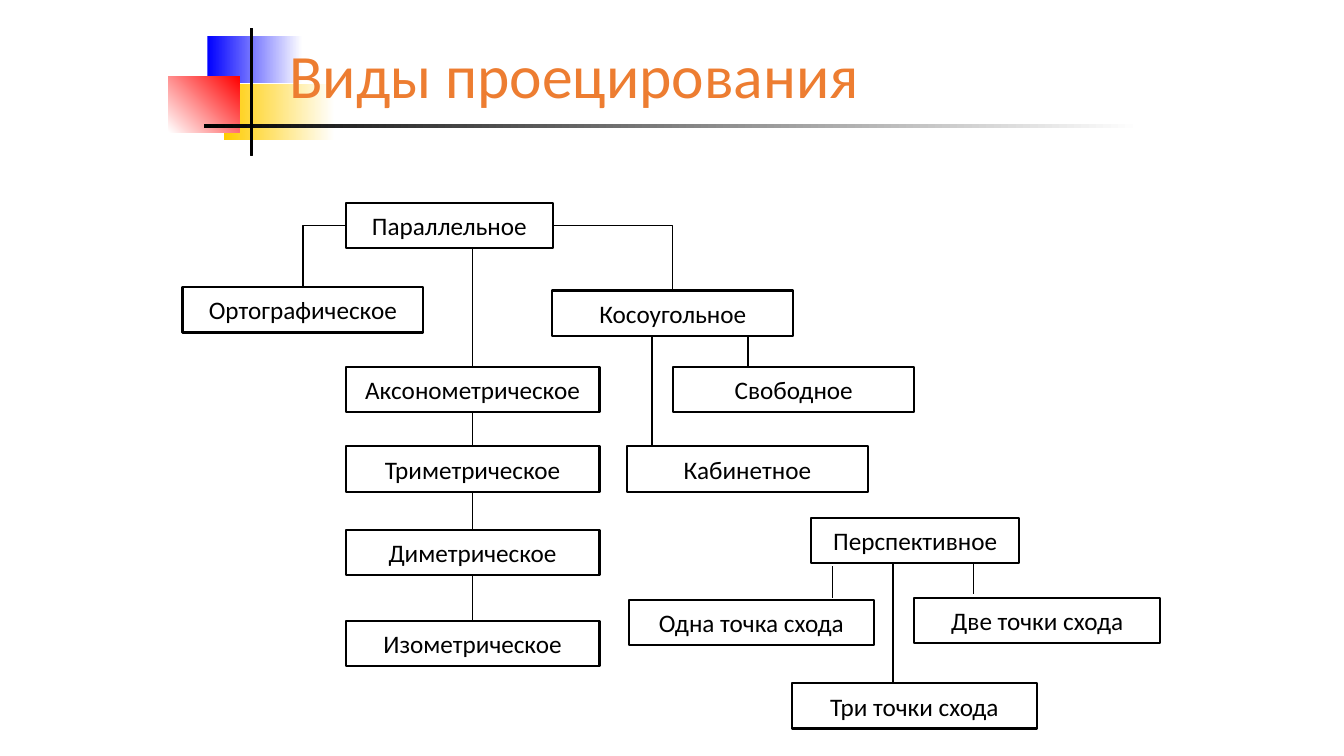
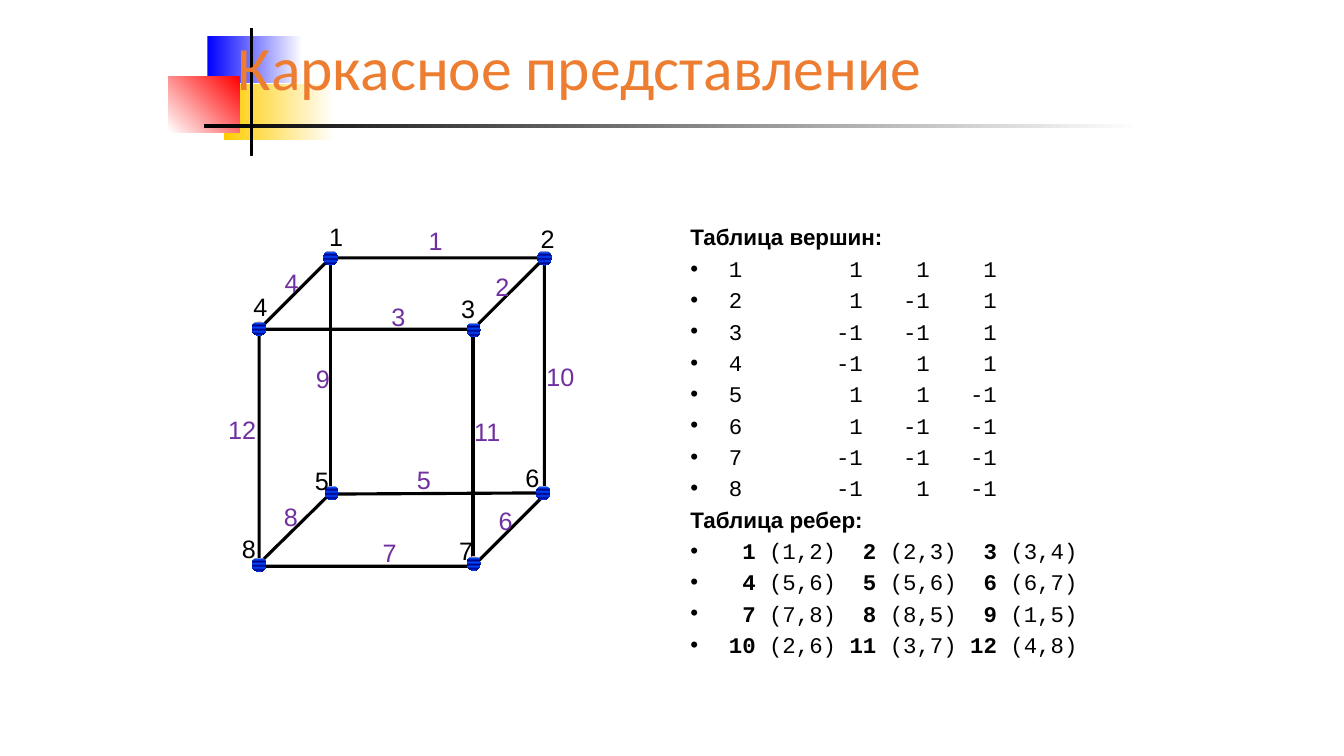
from dataclasses import dataclass
from typing import NamedTuple, Sequence

from lxml import etree
from pptx import Presentation
from pptx.dml.color import RGBColor
from pptx.enum import shapes, text
from pptx.oxml import ns
from pptx.util import Cm, Pt


# Theme: colours, fonts and type sizes
@dataclass(frozen=True)
class Theme:
    black: str = "000000"
    white: str = "FFFFFF"
    title: str = "ED7D31"
    blue: str = "0000FF"
    yellow: str = "FFCC00"
    red: str = "FF0000"
    edge: str = "7030A0"
    dot_rim: str = "F8CBAD"
    dot_light: str = "0047FF"
    dot_dark: str = "000082"
    main_font: str = "Calibri"
    label_font: str = "Arial"
    data_font: str = "Courier New"
    title_size: float = 44
    label_size: float = 18
    data_size: float = 16


THEME = Theme()


# Repeated elements; all lengths are centimetres
class Stop(NamedTuple):
    percent: int
    colour: str


class Panel(NamedTuple):
    left: float
    top: float
    width: float
    height: float
    start: str
    end: str
    angle: float = 0


class Node(NamedTuple):
    name: str
    left: float
    top: float
    width: float


class Segment(NamedTuple):
    x1: float
    y1: float
    x2: float
    y2: float


class Vertex(NamedTuple):
    dot_left: float
    dot_top: float
    label_x: float
    label_top: float
    coords: tuple[int, int, int]


class Edge(NamedTuple):
    label_x: float
    label_top: float
    ends: tuple[int, int]


EMBLEM = (
    Panel(5.23, 0.91, 2.39, 1.19, THEME.blue, THEME.white),
    Panel(5.64, 2.13, 2.79, 1.4, THEME.yellow, THEME.white),
    Panel(4.24, 1.93, 1.8, 1.4, THEME.white, THEME.red, 45),
    Panel(5.13, 3.12, 23.6, 0.1, THEME.black, THEME.white),
)

NODE_HEIGHT = 1.14
COLUMN = [
    Node(name, 8.71, top, 6.4)
    for name, top in (
        ("Аксонометрическое", 9.25),
        ("Триметрическое", 11.25),
        ("Диметрическое", 13.36),
        ("Изометрическое", 15.65),
    )
]
PARALLEL = Node("Параллельное", 8.71, 5.11, 5.23)
ORTHOGRAPHIC = Node("Ортографическое", 4.6, 7.24, 6.07)
OBLIQUE = Node("Косоугольное", 13.92, 7.32, 6.07)
OTHER_NODES = (
    Node("Свободное", 16.97, 9.25, 6.07),
    Node("Кабинетное", 15.8, 11.25, 6.07),
    Node("Перспективное", 20.45, 13.06, 5.23),
    Node("Две точки схода", 23.04, 15.06, 6.2),
    Node("Одна точка схода", 15.85, 15.11, 6.17),
    Node("Три точки схода", 19.96, 17.22, 6.17),
)
STEMS = [
    Segment(x, top, x, bottom)
    for x, top, bottom in (
        (11.91, 6.27, 9.25),
        (18.85, 8.46, 9.25),
        (16.43, 8.46, 11.25),
        (20.98, 14.27, 15.06),
        (24.54, 14.2, 14.96),
        (22.5, 14.22, 17.22),
    )
]

DOT_SIZE = 0.36
DOT_STOPS = [Stop(0, THEME.dot_rim)] + [
    Stop(percent, THEME.dot_dark if index % 2 else THEME.dot_light)
    for index, percent in enumerate((13, 28, 43, 58, 72, 87, 100))
]
HIDDEN_EDGES = (
    Segment(8.33, 6.5, 8.33, 12.47),
    Segment(6.53, 14.2, 8.31, 12.45),
    Segment(8.31, 12.45, 13.72, 12.42),
)
VERTICES = (
    Vertex(8.15, 6.32, 8.47, 5.46, (1, 1, 1)),
    Vertex(13.54, 6.32, 13.8, 5.51, (1, -1, 1)),
    Vertex(11.76, 8.13, 11.8, 7.26, (-1, -1, 1)),
    Vertex(6.35, 8.1, 6.56, 7.21, (-1, 1, 1)),
    Vertex(8.18, 12.24, 8.11, 11.61, (1, 1, -1)),
    Vertex(13.51, 12.24, 13.42, 11.53, (1, -1, -1)),
    Vertex(11.76, 14.02, 11.75, 13.36, (-1, -1, -1)),
    Vertex(6.35, 14.05, 6.27, 13.31, (-1, 1, -1)),
)
EDGES = (
    Edge(10.98, 5.56, (1, 2)),
    Edge(12.66, 6.71, (2, 3)),
    Edge(10.04, 7.47, (3, 4)),
    Edge(7.35, 6.6, (5, 6)),
    Edge(10.68, 11.58, (5, 6)),
    Edge(12.74, 12.62, (6, 7)),
    Edge(9.82, 13.41, (7, 8)),
    Edge(7.33, 12.52, (8, 5)),
    Edge(8.14, 9.04, (1, 5)),
    Edge(14.12, 8.97, (2, 6)),
    Edge(12.28, 10.36, (3, 7)),
    Edge(6.1, 10.31, (4, 8)),
)
EDGES_PER_ROW = 3


# Drawing helpers
def rgb(colour: str) -> RGBColor:
    return RGBColor.from_string(colour)


def set_font(font, name: str, size: float, colour: str) -> None:
    font.name, font.size = name, Pt(size)
    font.color.rgb = rgb(colour)


def add_box(parent, kind, left: float, top: float, width: float, height: float, line: float = 0):
    box = parent.add_shape(kind, Cm(left), Cm(top), Cm(width), Cm(height))
    box.shadow.inherit = False
    box.fill.background()
    if line:
        box.line.color.rgb = rgb(THEME.black)
        box.line.width = Pt(line)
    else:
        box.line.fill.background()
    return box


def fill_gradient(box, stops: Sequence[Stop], angle: float) -> None:
    box.fill.gradient()
    box.fill.gradient_angle = angle
    stop_list = box.element.spPr.find(".//" + ns.qn("a:gsLst"))
    for old in list(stop_list):
        stop_list.remove(old)
    for stop in stops:
        item = etree.SubElement(stop_list, ns.qn("a:gs"), pos=str(stop.percent * 1000))
        etree.SubElement(item, ns.qn("a:srgbClr"), val=stop.colour)


def add_line(page, segment: Segment, width: float, kind=shapes.MSO_CONNECTOR.STRAIGHT):
    line = page.shapes.add_connector(kind, *(Cm(value) for value in segment))
    line.line.color.rgb = rgb(THEME.black)
    line.line.width = Pt(width)
    etree.SubElement(line.element.spPr, ns.qn("a:effectLst"))
    return line


def join(page, start, start_site: int, end, end_site: int, bent: bool = False) -> None:
    kind = shapes.MSO_CONNECTOR.ELBOW if bent else shapes.MSO_CONNECTOR.STRAIGHT
    line = add_line(page, Segment(0, 0, 1, 1), 1, kind)
    line.begin_connect(start, start_site)
    line.end_connect(end, end_site)
    if bent:  # one corner: across, then down
        line.element.spPr.find(ns.qn("a:prstGeom")).set("prst", "bentConnector2")


def add_node(page, node: Node):
    box = add_box(page.shapes, shapes.MSO_SHAPE.RECTANGLE, node.left, node.top, node.width, NODE_HEIGHT, 1.5)
    box.text_frame.word_wrap = False
    para = box.text_frame.paragraphs[0]
    para.text, para.alignment = node.name, text.PP_ALIGN.CENTER
    set_font(para.font, THEME.main_font, THEME.label_size, THEME.black)
    return box


def add_label(page, number: int, center: float, top: float, colour: str) -> None:
    width = 1.4
    box = page.shapes.add_textbox(Cm(center - width / 2), Cm(top), Cm(width), Cm(1.02))
    box.text_frame.word_wrap = True
    para = box.text_frame.paragraphs[0]
    para.text, para.alignment = str(number), text.PP_ALIGN.CENTER
    set_font(para.font, THEME.label_font, THEME.label_size, colour)


def add_row(frame, font_name: str, bullet: bool):
    first = frame.paragraphs[0]
    para = frame.add_paragraph() if first.runs else first
    para.space_before = Pt(3.2)
    set_font(para.font, font_name, THEME.data_size, THEME.black)
    if bullet:
        props = para._p.get_or_add_pPr()
        props.set("marL", str(Cm(0.97)))
        props.set("indent", str(Cm(-0.97)))
        mark = etree.Element(ns.qn("a:buFont"), typeface=THEME.label_font)
        props.find(ns.qn("a:defRPr")).addprevious(mark)
        mark.addnext(etree.Element(ns.qn("a:buChar"), char="•"))
    return para


def add_span(para, words: str, bold: bool = False) -> None:
    span = para.add_run()
    span.text, span.font.bold = words, bold


# Shared page: emblem with the title in front of it
def new_page(deck, heading: str, left: float, top: float):
    page = deck.slides.add_slide(deck.slide_layouts[5])
    emblem = page.shapes.add_group_shape().shapes
    for panel in EMBLEM:
        box = add_box(emblem, shapes.MSO_SHAPE.RECTANGLE, *panel[:4])
        fill_gradient(box, (Stop(0, panel.start), Stop(100, panel.end)), panel.angle)
    post = add_box(emblem, shapes.MSO_SHAPE.RECTANGLE, 6.32, 0.71, 0.05, 3.2, 0.75)
    post.fill.solid()
    post.fill.fore_color.rgb = rgb(THEME.black)

    title = page.shapes.title
    page.shapes.element.append(title.element)
    title.left, title.top, title.width, title.height = Cm(left), Cm(top), Cm(22.86), Cm(2.16)
    frame = title.text_frame
    frame.auto_size = text.MSO_AUTO_SIZE.NONE
    frame.vertical_anchor = text.MSO_ANCHOR.MIDDLE
    para = frame.paragraphs[0]
    para.text, para.alignment, para.line_spacing = heading, text.PP_ALIGN.LEFT, 0.9
    set_font(para.font, THEME.main_font, THEME.title_size, THEME.title)
    return page


def build_projections(deck) -> None:
    page = new_page(deck, "Виды проецирования", 7.04, 0.91)
    parallel, orthographic, oblique = (add_node(page, node) for node in (PARALLEL, ORTHOGRAPHIC, OBLIQUE))
    column = [add_node(page, node) for node in COLUMN]
    for node in OTHER_NODES:
        add_node(page, node)
    # Links: sites 0 top, 1 left, 2 bottom, 3 right
    join(page, parallel, 1, orthographic, 0, bent=True)
    join(page, parallel, 3, oblique, 0, bent=True)
    for upper, lower in zip(column, column[1:]):
        join(page, upper, 2, lower, 0)
    for stem in STEMS:
        add_line(page, stem, 1)


def build_wireframe(deck) -> None:
    page = new_page(deck, "Каркасное представление", 5.74, 0.71)
    # Vertex and edge lists, in columns of a fixed-width font
    listing = page.shapes.add_textbox(Cm(17.15), Cm(5.51), Cm(10.59), Cm(11.43))
    frame = listing.text_frame
    frame.word_wrap = True
    add_span(add_row(frame, THEME.label_font, False), "Таблица вершин:", True)
    for number, vertex in enumerate(VERTICES, 1):
        x, y, z = vertex.coords
        add_span(add_row(frame, THEME.data_font, True), f"{number}{x:>9}{y:>5}{z:>5}")
    add_span(add_row(frame, THEME.label_font, False), "Таблица ребер:", True)
    for start in range(0, len(EDGES), EDGES_PER_ROW):
        para = add_row(frame, THEME.data_font, True)
        for offset, edge in enumerate(EDGES[start:start + EDGES_PER_ROW]):
            add_span(para, f"{' ' if offset else ''}{start + offset + 1:>2}", True)
            add_span(para, f" ({edge.ends[0]},{edge.ends[1]})")

    # Cube with its hidden edges, dots and numbers
    add_box(page.shapes, shapes.MSO_SHAPE.CUBE, 6.53, 6.5, 7.19, 7.77, 2.25)
    for segment in HIDDEN_EDGES:
        add_line(page, segment, 2.25)
    for vertex in VERTICES:
        dot = add_box(page.shapes, shapes.MSO_SHAPE.OVAL, vertex.dot_left, vertex.dot_top, DOT_SIZE, DOT_SIZE)
        fill_gradient(dot, DOT_STOPS, 270)
    for items, colour in ((VERTICES, THEME.black), (EDGES, THEME.edge)):
        for number, item in enumerate(items, 1):
            add_label(page, number, item.label_x, item.label_top, colour)


def main() -> None:
    deck = Presentation()
    deck.slide_width, deck.slide_height = Cm(33.87), Cm(19.05)
    build_projections(deck)
    build_wireframe(deck)
    deck.save("out.pptx")


if __name__ == "__main__":
    main()
